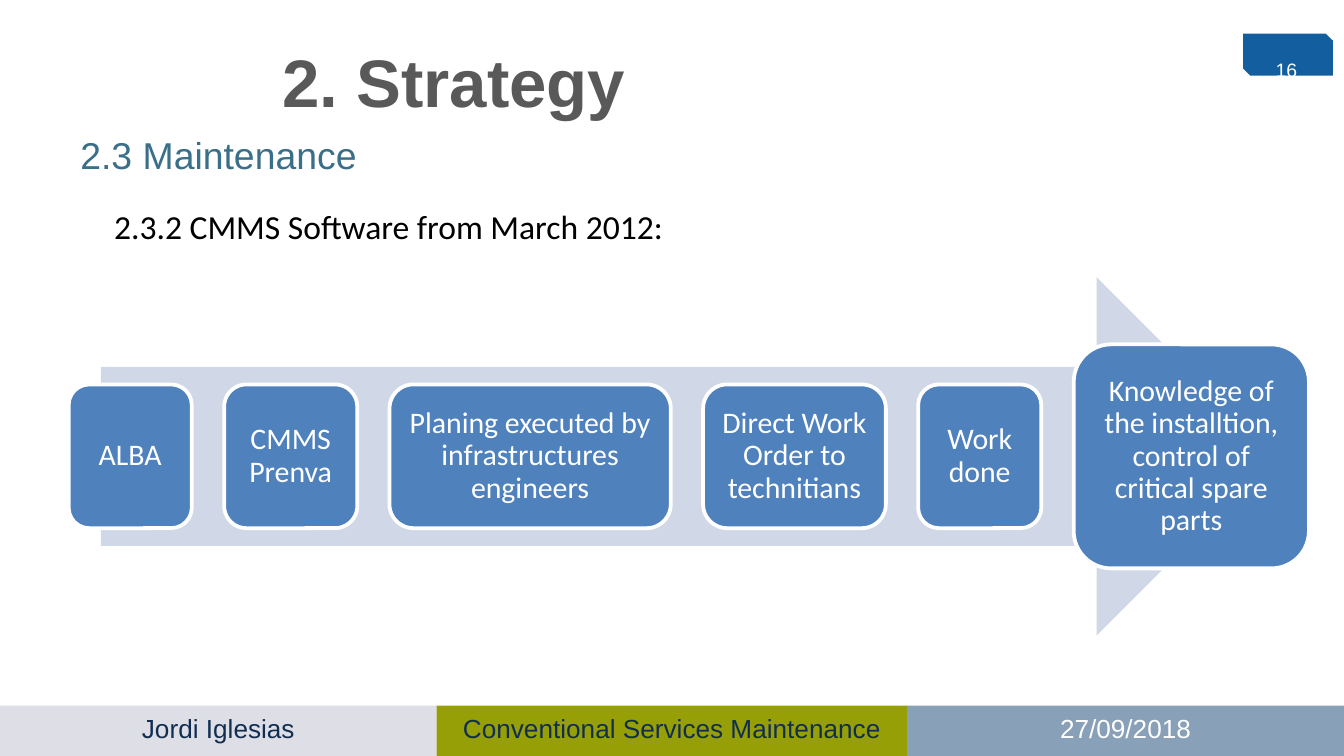
from pptx import Presentation
from pptx.dml.color import RGBColor
from pptx.enum.shapes import MSO_SHAPE as Preset
from pptx.enum.text import MSO_ANCHOR as Anchor, PP_ALIGN as Align
from pptx.util import Pt


def color(hex_code):
    return RGBColor.from_string(hex_code)


class SlideBuilder:
    navy, white, blue = "112E50", "FFFFFF", "4F81BD"

    def __init__(self, page):
        self.page = page

    def shape(self, preset, left, top, width, height, fill, outline=None):
        shape = self.page.shapes.add_shape(
            preset, Pt(left), Pt(top), Pt(width), Pt(height))
        shape.shadow.inherit = False
        shape.fill.solid()
        shape.fill.fore_color.rgb = color(fill)
        if outline:
            shape.line.color.rgb = color(outline)
            shape.line.width = Pt(2)
        else:
            shape.line.fill.background()
        return shape

    def fill_text(self, frame, text, size, font, ink, align=Align.LEFT, bold=False):
        frame.word_wrap = True
        para = frame.paragraphs[0]
        para.alignment = align
        span = para.add_run()
        span.text = text
        span.font.size = Pt(size)
        span.font.name = font
        span.font.bold = bold
        span.font.color.rgb = color(ink)
        return para

    def text(self, left, top, width, height, *content, **style):
        box = self.page.shapes.add_textbox(
            Pt(left), Pt(top), Pt(width), Pt(height))
        self.fill_text(box.text_frame, *content, **style)

    def step(self, left, middle, width, height, text):
        card = self.shape(Preset.ROUNDED_RECTANGLE, left, middle - height / 2,
                          width, height, self.blue, self.white)
        frame = card.text_frame
        frame.vertical_anchor = Anchor.MIDDLE
        frame.margin_left = frame.margin_right = Pt(5)
        frame.margin_top = frame.margin_bottom = Pt(5)
        para = self.fill_text(frame, text, 16, "Calibri", self.white, Align.CENTER)
        para.line_spacing = 0.9


def main():
    deck = Presentation()
    deck.slide_width, deck.slide_height = Pt(720), Pt(405)
    slide = SlideBuilder(deck.slides.add_slide(deck.slide_layouts[6]))

    # Page number badge
    slide.shape(Preset.SNIP_2_DIAG_RECTANGLE, 666, 18, 48, 22.5, "125E9F")
    slide.text(654, 27.4, 48, 18, "16", 10.4, "Arial", slide.white,
               align=Align.RIGHT)

    # Footer bands
    footer = [
        (0, 234, "DEDFE6", "Jordi Iglesias", slide.navy),
        (234, 252, "979F07", "Conventional Services Maintenance", slide.navy),
        (486, 234, "88A0B8", "27/09/2018", slide.white),
    ]
    for left, width, fill, label, ink in footer:
        slide.shape(Preset.RECTANGLE, left, 378, width, 27, fill)
        slide.text(left, 378, width, 24.5, label, 14, "Arial", ink,
                   align=Align.CENTER)

    # Headings
    slide.text(144, 18, 516, 51, "2. Strategy", 36, "Arial", "595959", bold=True)
    slide.text(36, 67.5, 648, 27, "2.3 Maintenance", 20, "Arial", "3A6F8A")
    slide.text(54, 106.5, 348, 29, "2.3.2 CMMS Software from March 2012:",
               18, "Calibri", "000000")

    # Process arrow with its steps at equal gaps
    slide.shape(Preset.RIGHT_ARROW, 54, 148.5, 629.5, 192, "D0D8E8")
    steps = [
        (66, 77, "ALBA"),
        (71.3, 77, "CMMS Prenva"),
        (150.7, 77, "Planing executed by infrastructures engineers"),
        (97.9, 77, "Direct Work Order to technitians"),
        (66, 77, "Work done"),
        (126, 120, "Knowledge of the installtion, control of critical spare parts"),
    ]
    left, gap, middle = 36.8, 17.3, 244.5
    for width, height, label in steps:
        slide.step(left, middle, width, height, label)
        left += width + gap

    deck.save("out.pptx")


if __name__ == "__main__":
    main()
